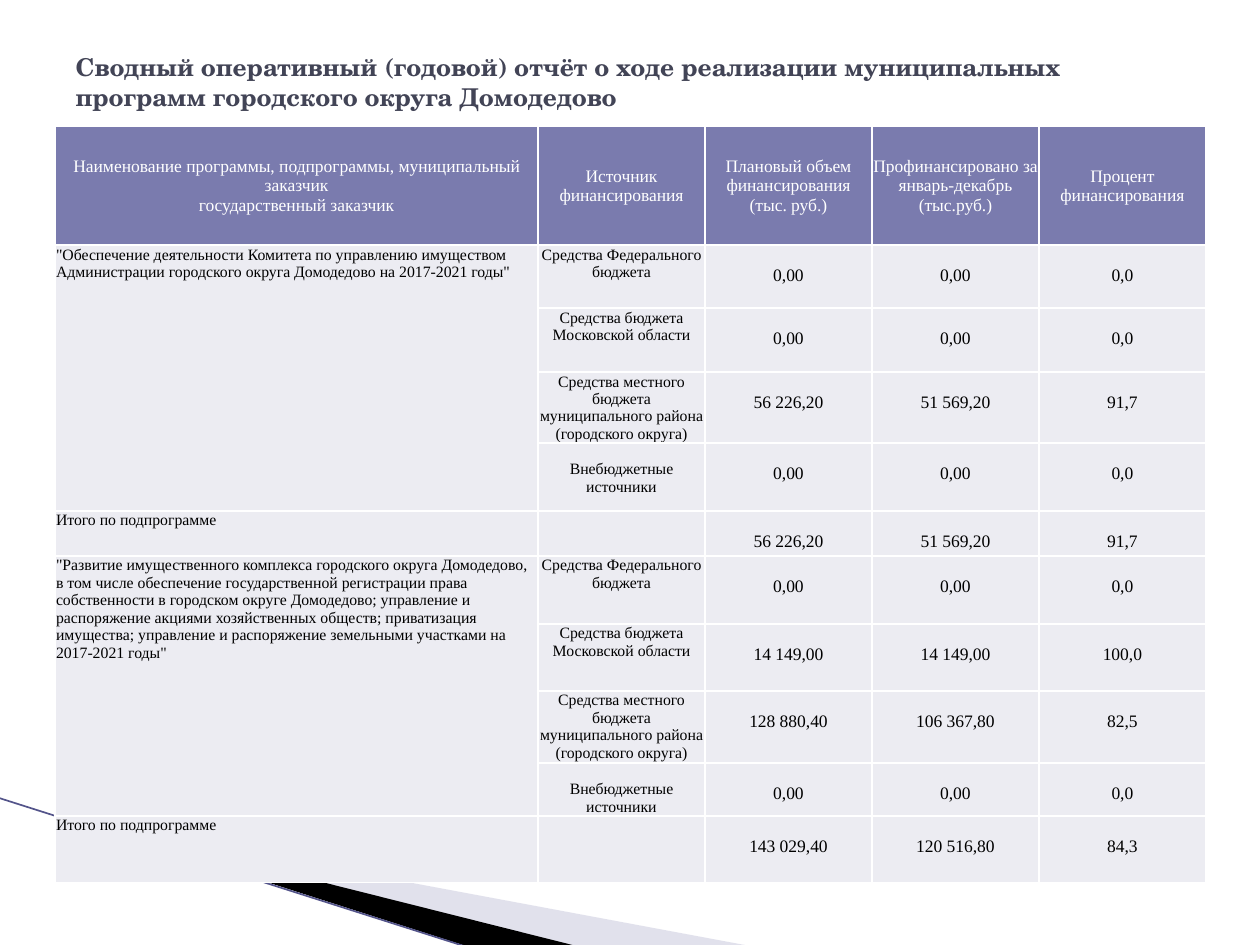
from copy import deepcopy
from dataclasses import dataclass

from lxml.etree import SubElement
from pptx import Presentation
from pptx.dml.color import RGBColor
from pptx.enum.shapes import MSO_CONNECTOR
from pptx.enum.text import MSO_ANCHOR, MSO_AUTO_SIZE, PP_ALIGN
from pptx.oxml.ns import qn
from pptx.util import Pt

TITLE = ("Сводный оперативный (годовой) отчёт о ходе реализации "
         "муниципальных программ городского округа Домодедово")
HEADERS = [
    "Наименование программы, подпрограммы, муниципальный заказчик\vгосударственный заказчик",
    "Источник финансирования",
    "Плановый объем финансирования (тыс. руб.)",
    "Профинансировано за январь-декабрь (тыс.руб.)",
    "Процент финансирования",
]
SOURCES = [
    "Средства Федерального бюджета",
    "Средства бюджета Московской области",
    "Средства местного бюджета муниципального района (городского округа)",
    "Внебюджетные источники",
]
TOTAL = "Итого по подпрограмме"
ZERO = ("0,00", "0,00", "0,0")
# Each programme: name, amounts by source, total
PROGRAMMES = [
    ('"Обеспечение деятельности Комитета по управлению имуществом '
     'Администрации городского округа Домодедово на 2017-2021 годы"',
     [ZERO, ZERO, ("56 226,20", "51 569,20", "91,7"), ZERO],
     ("56 226,20", "51 569,20", "91,7")),
    ('"Развитие имущественного комплекса городского округа Домодедово, '
     'в том числе обеспечение государственной регистрации права собственности '
     'в городском округе Домодедово; управление и распоряжение акциями '
     'хозяйственных обществ; приватизация имущества; управление и распоряжение '
     'земельными участками на 2017-2021 годы"',
     [ZERO, ("14 149,00", "14 149,00", "100,0"),
      ("128 880,40", "106 367,80", "82,5"), ZERO],
     ("143 029,40", "120 516,80", "84,3")),
]

# Lengths in px, 126 to the inch
SLIDE_W, SLIDE_H = 1260, 945
TITLE_BOX = (63, 38, 1134, 87)
TABLE_LEFT, TABLE_TOP = 55, 126
COLUMNS = [483] + [167] * 4
ROWS = [119, 63, 64, 71, 68, 45, 68, 67, 72, 53, 67]
INSET = 1
LABEL_DROP, NUMBER_DROP = 18, 21
PALE_WEDGE = [(69, 819), (750, 946), (575, 946)]
BLACK_WEDGE = [(67, 818), (576, 946), (469, 947)]
EDGE_LINE = (-1, 798, 467, 947)
PX = 914400 / 126


@dataclass(frozen=True)
class Theme:
    title_font: str = "TeX Gyre Schola"
    table_font: str = "Times New Roman"
    title_size: float = 14
    number_size: float = 10
    label_size: float = 9
    title: str = "424456"
    header: str = "7A7BAE"
    body: str = "ECECF2"
    white: str = "FFFFFF"
    black: str = "000000"
    wedge: str = "B6B6D1"
    edge: str = "53548A"


THEME = Theme()


def emu(px):
    return round(px * PX)


def style_run(r, color, **formats):
    for name, value in formats.items():
        setattr(r.font, name, value)
    r.font.color.rgb = RGBColor.from_string(color)


def add_wedge(s, points, color, opacity=100):
    builder = s.shapes.build_freeform(*points[0], scale=PX)
    builder.add_line_segments(points[1:], close=True)
    sp = builder.convert_to_shape()
    sp.shadow.inherit = False
    sp.line.fill.background()
    sp.fill.solid()
    sp.fill.fore_color.rgb = RGBColor.from_string(color)
    if opacity < 100:
        clr = sp.fill._xPr.find(".//" + qn("a:srgbClr"))
        SubElement(clr, qn("a:alpha"), val=str(opacity * 1000))


def add_edge(s):
    line = s.shapes.add_connector(MSO_CONNECTOR.STRAIGHT, *map(emu, EDGE_LINE))
    line.line.color.rgb = RGBColor.from_string(THEME.edge)
    line.line.width = Pt(0.95)
    SubElement(line._element.spPr, qn("a:effectLst"))


def set_borders(cell):
    tc_pr = cell._tc.get_or_add_tcPr()
    for side in ("lnL", "lnR", "lnT", "lnB"):
        ln = SubElement(tc_pr, qn("a:" + side), w=str(Pt(1)))
        fill = SubElement(ln, qn("a:solidFill"))
        SubElement(fill, qn("a:srgbClr"), val=THEME.white)


def fill_cell(cell, text, size, header=False, align=PP_ALIGN.CENTER, drop=INSET):
    set_borders(cell)
    cell.fill.solid()
    cell.fill.fore_color.rgb = RGBColor.from_string(THEME.header if header else THEME.body)
    cell.margin_left = cell.margin_right = emu(INSET)
    cell.margin_top, cell.margin_bottom = emu(drop), 0
    cell.vertical_anchor = MSO_ANCHOR.MIDDLE if header else MSO_ANCHOR.TOP
    if not text:
        return
    p = cell.text_frame.paragraphs[0]
    p.text, p.alignment = text, align
    for r in p.runs:
        style_run(r, THEME.white if header else THEME.black,
                  name=THEME.table_font, size=Pt(size))
    for br in p._p.findall(qn("a:br")):
        br.append(deepcopy(p.runs[0]._r.rPr))


def table_rows():
    for name, amounts, total in PROGRAMMES:
        for i, (source, values) in enumerate(zip(SOURCES, amounts)):
            yield ("" if i else name, source, *values)
        yield (TOTAL, "", *total)


def add_report(s):
    frame = s.shapes.add_table(len(ROWS), len(COLUMNS), emu(TABLE_LEFT), emu(TABLE_TOP),
                               emu(sum(COLUMNS)), emu(sum(ROWS)))
    table = frame.table
    table.first_row = table.horz_banding = False
    for column, width in zip(table.columns, COLUMNS):
        column.width = emu(width)
    for row, height in zip(table.rows, ROWS):
        row.height = emu(height)
    for c, text in enumerate(HEADERS):
        fill_cell(table.cell(0, c), text, THEME.number_size, header=True)
    for i, (name, source, *values) in enumerate(table_rows(), 1):
        fill_cell(table.cell(i, 0), name, THEME.label_size, align=PP_ALIGN.LEFT)
        fill_cell(table.cell(i, 1), source, THEME.label_size,
                  drop=LABEL_DROP if source == SOURCES[-1] else INSET)
        for c, value in enumerate(values, 2):
            fill_cell(table.cell(i, c), value, THEME.number_size, drop=NUMBER_DROP)
    block = len(SOURCES) + 1
    for top in range(1, len(ROWS), block):
        table.cell(top, 0).merge(table.cell(top + len(SOURCES) - 1, 0))


def set_title(s):
    sp = s.shapes.title
    sp.left, sp.top, sp.width, sp.height = map(emu, TITLE_BOX)
    tf = sp.text_frame
    tf.word_wrap, tf.auto_size = True, MSO_AUTO_SIZE.NONE
    tf.vertical_anchor = MSO_ANCHOR.MIDDLE
    p = tf.paragraphs[0]
    p.text, p.alignment = TITLE, PP_ALIGN.LEFT
    style_run(p.runs[0], THEME.title, name=THEME.title_font,
              size=Pt(THEME.title_size), bold=True)


def main():
    prs = Presentation()
    prs.slide_width, prs.slide_height = emu(SLIDE_W), emu(SLIDE_H)
    s = prs.slides.add_slide(prs.slide_layouts[5])
    add_wedge(s, PALE_WEDGE, THEME.wedge, opacity=40)
    add_wedge(s, BLACK_WEDGE, THEME.black)
    add_edge(s)
    set_title(s)
    add_report(s)
    prs.save("out.pptx")


if __name__ == "__main__":
    main()
